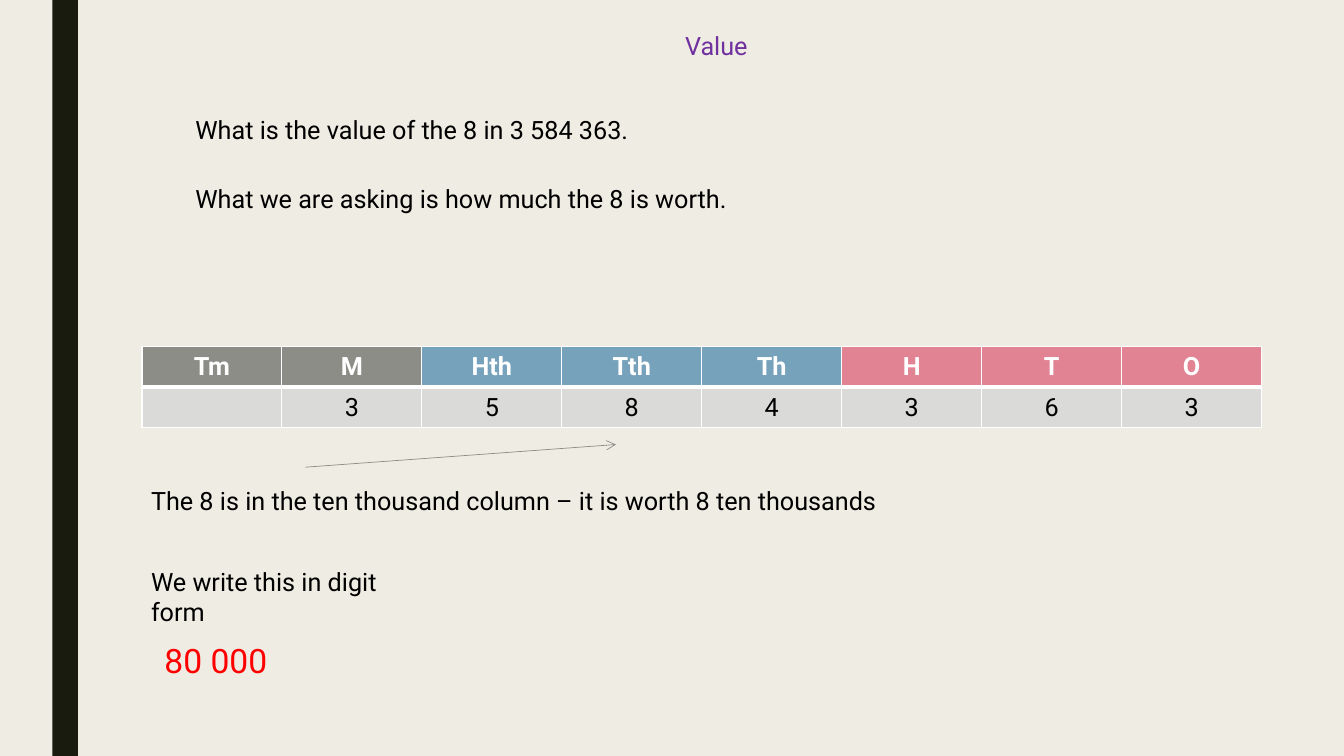
import pptx
import pptx.util
import pptx.dml.color
import pptx.enum.shapes
import pptx.enum.text
import pptx.oxml
import pptx.oxml.ns
from lxml import etree

RGB = pptx.dml.color.RGBColor
PAPER = RGB(0xEF, 0xED, 0xE3)
DARK = RGB(0x19, 0x1B, 0x0E)
PURPLE = RGB(0x70, 0x30, 0xA0)
BLACK = RGB(0, 0, 0)
WHITE = RGB(255, 255, 255)
RED = RGB(255, 0, 0)
GREY = RGB(0x8C, 0x8D, 0x86)
BLUE = RGB(0x77, 0xA2, 0xBB)
PINK = RGB(0xE2, 0x83, 0x94)
PALE = RGB(0xDA, 0xDB, 0xD9)

WIDE = pptx.util.Inches(13.33)
HIGH = pptx.util.Inches(7.5)
LEFT = pptx.enum.text.PP_ALIGN.LEFT
MID = pptx.enum.text.PP_ALIGN.CENTER

HEADS = [("Tm", GREY), ("M", GREY), ("Hth", BLUE), ("Tth", BLUE),
         ("Th", BLUE), ("H", PINK), ("T", PINK), ("O", PINK)]
DIGITS = ["", "3", "5", "8", "4", "3", "6", "3"]


def place(x, y):
    """Turn percentages of the slide's width and height into lengths."""
    return round(WIDE * x / 100), round(HIGH * y / 100)


def write(frame, text, align=LEFT, **look):
    para = frame.paragraphs[0]
    para.alignment = align
    run = para.add_run()
    run.text = text
    look = {"size": 18, "color": BLACK, "bold": False, **look}
    run.font.color.rgb = look.pop("color")
    look["size"] = pptx.util.Pt(look["size"])
    for name, value in {"name": "Roboto", **look}.items():
        setattr(run.font, name, value)


def label(slide, text, spot, area, wrap=False, **look):
    box = slide.shapes.add_textbox(*place(*spot), *place(*area))
    frame = box.text_frame
    frame.word_wrap = wrap
    frame.auto_size = pptx.enum.text.MSO_AUTO_SIZE.SHAPE_TO_FIT_TEXT
    write(frame, text, **look)


def bar(slide, spot, area, color):
    kind = pptx.enum.shapes.MSO_SHAPE.RECTANGLE
    shape = slide.shapes.add_shape(kind, *place(*spot), *place(*area))
    shape.shadow.inherit = False
    shape.fill.solid()
    shape.fill.fore_color.rgb = color
    shape.line.fill.background()


def arrow(slide, start, end, color):
    kind = pptx.enum.shapes.MSO_CONNECTOR.STRAIGHT
    link = slide.shapes.add_connector(kind, *place(*start), *place(*end))
    link.line.color.rgb = color
    link.line.width = pptx.util.Pt(0.5)
    tag = pptx.oxml.ns.qn
    props = link._element.spPr
    etree.SubElement(props.find(tag("a:ln")), tag("a:tailEnd"), type="arrow")
    etree.SubElement(props, tag("a:effectLst"))


def edge(cell, top, bottom):
    """Draw white cell borders, with top and bottom widths in points."""
    props = cell._tc.get_or_add_tcPr()
    sides = {"L": 1, "R": 1, "T": top, "B": bottom}
    for spot, (side, width) in enumerate(sides.items()):
        props.insert(spot, pptx.oxml.parse_xml(
            f'<a:ln{side} {pptx.oxml.ns.nsdecls("a")} w="{int(pptx.util.Pt(width))}">'
            f'<a:solidFill><a:srgbClr val="{WHITE}"/></a:solidFill></a:ln{side}>'))


def fill(cell, text, back, **look):
    cell.fill.solid()
    cell.fill.fore_color.rgb = back
    cell.vertical_anchor = pptx.enum.text.MSO_ANCHOR.MIDDLE
    if text:
        write(cell.text_frame, text, MID, **look)


def chart(slide, spot, area):
    """Add the place value table."""
    frame = slide.shapes.add_table(2, len(HEADS), *place(*spot), *place(*area))
    table = frame.table
    table.first_row = table.horz_banding = False
    for col, ((head, back), digit) in enumerate(zip(HEADS, DIGITS)):
        top, low = table.cell(0, col), table.cell(1, col)
        fill(top, head, back, color=WHITE, bold=True)
        fill(low, digit, PALE)
        edge(top, 1, 3)
        edge(low, 3, 1)


def main():
    deck = pptx.Presentation()
    deck.slide_width, deck.slide_height = WIDE, HIGH
    slide = deck.slides.add_slide(deck.slide_layouts[6])
    slide.background.fill.solid()
    slide.background.fill.fore_color.rgb = PAPER

    bar(slide, (3.9, 0), (1.9, 100), DARK)
    label(slide, "Value", (15.6, 3.33), (75.4, 5.33), wrap=True,
          align=MID, color=PURPLE)
    chart(slide, (10.56, 45.8), (83.33, 10.8))
    label(slide, "What is the value of the 8 in 3 584 363.",
          (13.8, 14.4), (34.9, 5.33))
    label(slide, "What we are asking is how much the 8 is worth.",
          (13.8, 23.6), (41.5, 5.33))
    arrow(slide, (22.73, 61.8), (45.83, 58.8), GREY)
    label(slide, "The 8 is in the ten thousand column – it is worth 8 ten thousands",
          (10.5, 63.6), (55.6, 5.33))
    label(slide, "We write this in digit form", (10.5, 74.2), (22.4, 5.33),
          wrap=True)
    label(slide, "80 000", (11.5, 84), (9.2, 6.67), size=24, color=RED)
    deck.save("out.pptx")


if __name__ == "__main__":
    main()
